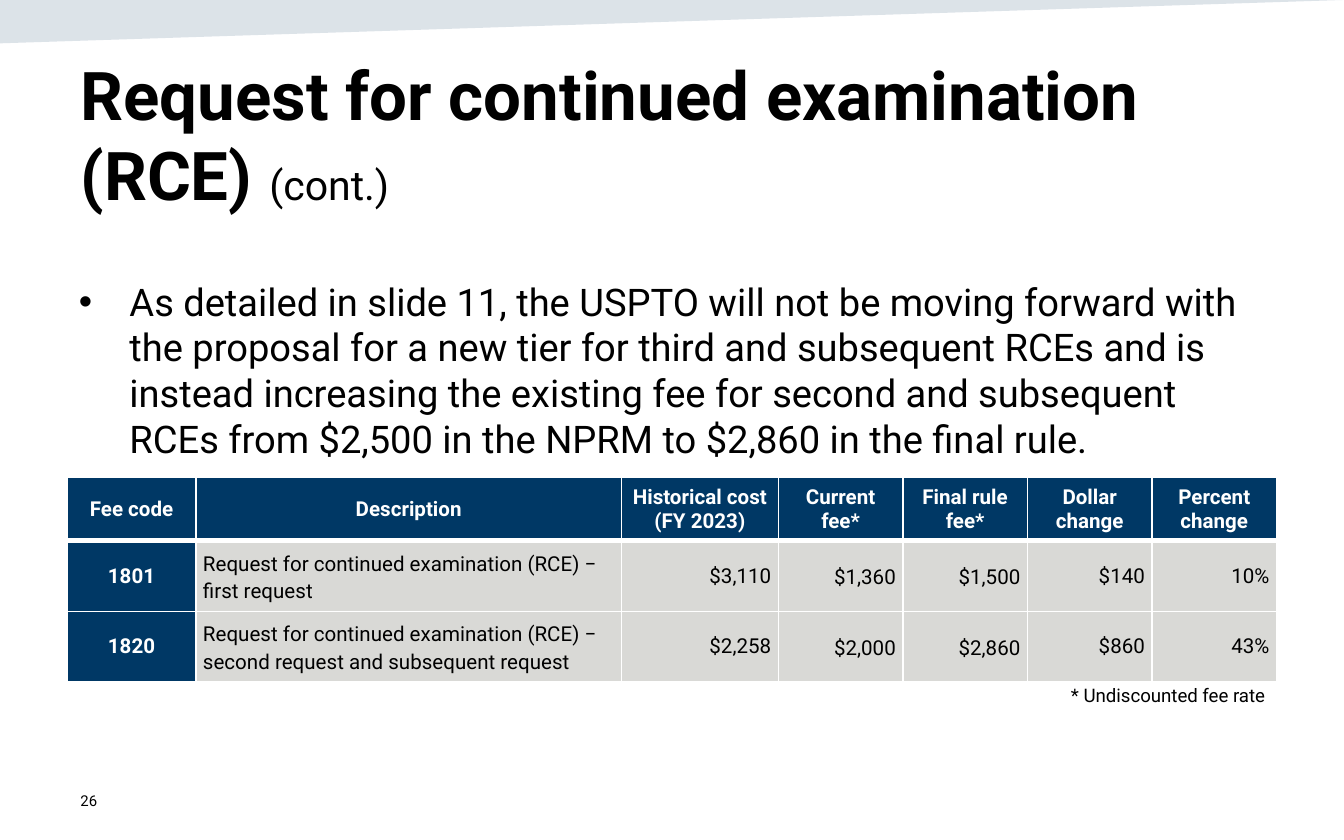
import pptx
import pptx.util
import pptx.dml.color
import pptx.enum.text
import pptx.oxml
import pptx.oxml.ns
import lxml.etree

PX = 9525  # EMU per px, 96 px to the inch
FONT = "Roboto"
COLORS = {
    "black": "000000",
    "white": "FFFFFF",
    "navy": "003865",
    "gray": "D9D9D6",
    "band": "164469",
}
ALIGN = pptx.enum.text.PP_ALIGN
ANCHOR = pptx.enum.text.MSO_ANCHOR

COLUMN_WIDTHS = [92, 304, 112] + [89] * 4
ROW_HEIGHTS = [43, 49, 49]
FEES = [
    ["Fee code", "Description", "Historical cost\n(FY 2023)", "Current fee*",
     "Final rule fee*", "Dollar change", "Percent change"],
    ["1801", "Request for continued examination (RCE) ‒ first request",
     "$3,110", "$1,360", "$1,500", "$140", "10%"],
    ["1820", "Request for continued examination (RCE) ‒ second request and subsequent request",
     "$2,258", "$2,000", "$2,860", "$860", "43%"],
]
CODE, DESCRIPTION, CURRENT, FINAL = 0, 1, 3, 4


def px(length):
    return pptx.util.Emu(length * PX)


def rgb(name):
    return pptx.dml.color.RGBColor.from_string(COLORS[name])


def format_run(run, size, color="black", bold=False):
    run.font.name = FONT
    run.font.size = pptx.util.Pt(size)
    run.font.bold = bold
    run.font.color.rgb = rgb(color)


def add_band(slide):
    """Draw the pale wedge along the top edge."""
    builder = slide.shapes.build_freeform(0, 0, scale=PX)
    builder.add_line_segments([(0, 31), (960, 0)])
    band = builder.convert_to_shape()
    band.shadow.inherit = False
    band.line.fill.background()
    band.fill.solid()
    band.fill.fore_color.rgb = rgb("band")
    color = band.fill._xPr.find(".//" + pptx.oxml.ns.qn("a:srgbClr"))
    lxml.etree.SubElement(color, pptx.oxml.ns.qn("a:alpha"), val="15000")


def set_title(slide):
    title = slide.shapes.title
    title.left, title.top, title.width, title.height = map(px, (48, 33, 864, 100))
    frame = title.text_frame
    frame.word_wrap = True
    frame.auto_size = pptx.enum.text.MSO_AUTO_SIZE.NONE
    frame.vertical_anchor = ANCHOR.TOP
    heading = frame.paragraphs[0]
    heading.alignment = ALIGN.LEFT
    for text, size, bold in [("Request for continued examination (RCE) ", 36, True),
                             ("(cont.)", 22, False)]:
        run = heading.add_run()
        run.text = text
        format_run(run, size, bold=bold)


def add_text(slide, box, text, size, align=ALIGN.LEFT, anchor=ANCHOR.TOP):
    frame = slide.shapes.add_textbox(*map(px, box)).text_frame
    frame.word_wrap = True
    frame.vertical_anchor = anchor
    frame.text = text
    paragraph = frame.paragraphs[0]
    paragraph.alignment = align
    format_run(paragraph.runs[0], size)
    return paragraph


def add_bullet(paragraph, indent):
    properties = paragraph._p.get_or_add_pPr()
    properties.set("marL", str(px(indent)))
    properties.set("indent", str(-px(indent)))
    lxml.etree.SubElement(properties, pptx.oxml.ns.qn("a:buFont"), typeface="Arial")
    lxml.etree.SubElement(properties, pptx.oxml.ns.qn("a:buChar"), char="•")


def set_borders(cell, row):
    """Draw white cell edges, thick between the header and the first fee."""
    thick = {(0, "B"), (1, "T")}
    for side in "LRTB":
        width = pptx.util.Pt(3 if (row, side) in thick else 1)
        cell._tc.get_or_add_tcPr().append(pptx.oxml.parse_xml(
            f'<a:ln{side} {pptx.oxml.ns.nsdecls("a")} w="{width}"><a:solidFill>'
            f'<a:srgbClr val="{COLORS["white"]}"/></a:solidFill></a:ln{side}>'))


def space_fee(paragraph, column):
    if column in (DESCRIPTION, CURRENT, FINAL):
        paragraph.line_spacing = 1.15
        paragraph.space_after = pptx.util.Pt(3)
    else:
        paragraph.space_before = paragraph.space_after = pptx.util.Pt(6)


def fill_cell(cell, row, column, text):
    heading = row == 0 or column == CODE
    cell.margin_left = cell.margin_right = px(5)
    cell.margin_top = cell.margin_bottom = px(5)
    cell.vertical_anchor = ANCHOR.MIDDLE
    set_borders(cell, row)
    cell.fill.solid()
    cell.fill.fore_color.rgb = rgb("navy" if heading else "gray")
    cell.text_frame.text = text
    for paragraph in cell.text_frame.paragraphs:
        if heading:
            paragraph.alignment = ALIGN.CENTER
        else:
            paragraph.alignment = ALIGN.LEFT if column == DESCRIPTION else ALIGN.RIGHT
        if row > 0:
            space_fee(paragraph, column)
        format_run(paragraph.runs[0], 11, "white" if heading else "black", heading)


def add_fee_table(slide):
    table = slide.shapes.add_table(
        len(ROW_HEIGHTS), len(COLUMN_WIDTHS), px(48), px(341),
        px(sum(COLUMN_WIDTHS)), px(sum(ROW_HEIGHTS))).table
    for column, width in zip(table.columns, COLUMN_WIDTHS):
        column.width = px(width)
    for row, height in zip(table.rows, ROW_HEIGHTS):
        row.height = px(height)
    for row, texts in enumerate(FEES):
        for column, text in enumerate(texts):
            fill_cell(table.cell(row, column), row, column, text)


def main():
    deck = pptx.Presentation()
    deck.slide_width, deck.slide_height = px(960), px(600)
    slide = deck.slides.add_slide(deck.slide_layouts.get_by_name("Title Only"))
    add_band(slide)
    set_title(slide)
    statement = add_text(
        slide, (47, 194, 864, 143),
        "As detailed in slide 11, the USPTO will not be moving forward with the proposal "
        "for a new tier for third and subsequent RCEs and is instead increasing the existing "
        "fee for second and subsequent RCEs from $2,500 in the NPRM to $2,860 in the final rule.",
        20.4)
    statement.space_before = pptx.util.Pt(9)
    add_bullet(statement, 36)
    add_fee_table(slide)
    add_text(slide, (49, 484, 864, 26), "* Undiscounted fee rate", 10, ALIGN.RIGHT)
    add_text(slide, (48, 556, 216, 32), "26", 8, anchor=ANCHOR.MIDDLE)
    deck.save("out.pptx")


if __name__ == "__main__":
    main()
